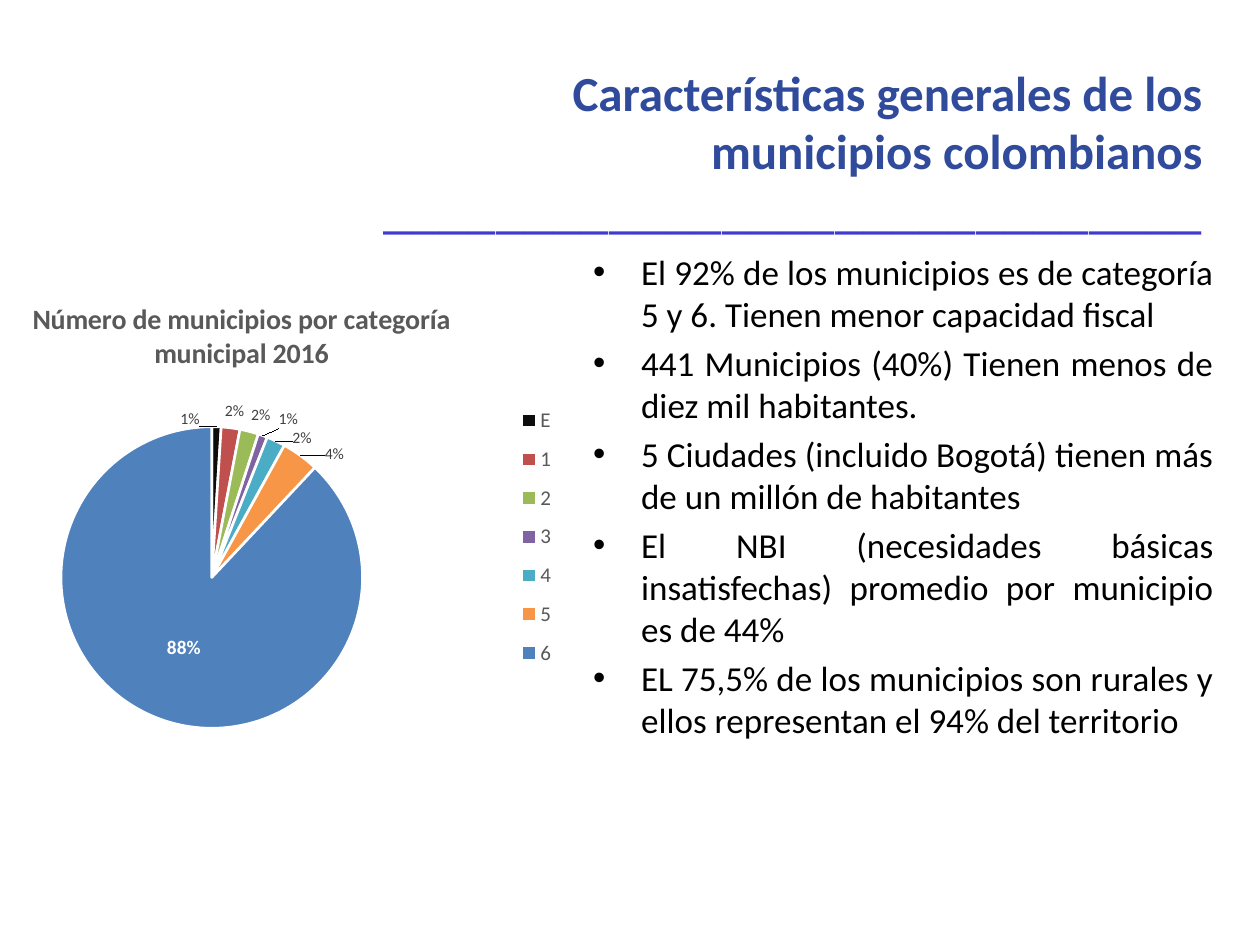
import pptx
import pptx.chart.data
import pptx.dml.color
import pptx.enum.chart
import pptx.enum.text
import pptx.oxml
import pptx.oxml.ns
import pptx.util

FONT = "Calibri"
CELL = pptx.util.Inches(0.1)  # the slide is a grid of 100 columns by 75 rows
ALIGN = pptx.enum.text.PP_ALIGN
ANCHOR = pptx.enum.text.MSO_ANCHOR
LABEL_POSITION = pptx.enum.chart.XL_LABEL_POSITION

BULLETS = [
    "El 92% de los municipios es de categoría 5 y 6. Tienen menor capacidad fiscal",
    "441 Municipios (40%) Tienen menos de diez mil habitantes.",
    "5 Ciudades (incluido Bogotá) tienen más de un millón de habitantes",
    "El NBI (necesidades básicas insatisfechas) promedio por municipio es de 44%",
    "EL 75,5% de los municipios son rurales y ellos representan el 94% del territorio",
]
# category, percentage, colour, label shift as shares of the chart
SLICES = [
    ("E", 1, "0D0D0D", (-0.04, 0.02)),
    ("1", 2, "C0504D", (-0.01, 0)),
    ("2", 2, "9BBB59", None),
    ("3", 1, "8064A2", (0.02, 0)),
    ("4", 2, "4BACC6", (0.02, 0.03)),
    ("5", 4, "F79646", (0.03, 0.03)),
    ("6", 88, "4F81BD", None),
]


def colour(code):
    return pptx.dml.color.RGBColor.from_string(code)


def grid(*cells):
    return [round(cell * CELL) for cell in cells]


def style(font, size, code, bold=False):
    font.name = FONT
    font.size = pptx.util.Pt(size)
    font.bold = bold
    font.color.rgb = colour(code)


def add_box(page, place, anchor):
    frame = page.shapes.add_textbox(*grid(*place)).text_frame
    frame.word_wrap = True
    frame.vertical_anchor = anchor
    return frame


def add_span(para, text, align, size, code, bold=False):
    para.alignment = align
    span = para.add_run()
    span.text = text
    style(span.font, size, code, bold)


def add_bullets(page, place, texts):
    frame = add_box(page, place, ANCHOR.TOP)
    for index, text in enumerate(texts):
        para = frame.add_paragraph() if index else frame.paragraphs[0]
        properties = para._p.get_or_add_pPr()
        indent = pptx.util.Inches(0.38)
        properties.set("marL", str(indent))
        properties.set("indent", str(-indent))
        for tag, key, value in (("a:buFont", "typeface", "Arial"), ("a:buChar", "char", "•")):
            bullet = pptx.oxml.ns.qn(tag)
            properties.append(properties.makeelement(bullet, {key: value}))
        if index:
            para.space_before = pptx.util.Pt(4)
        add_span(para, text, ALIGN.JUSTIFY, 20, "000000")


def set_layout(element, index, mode="edge", inner=False, **shares):
    """Place a chart part at shares of the chart's size, or shift it with mode factor."""
    for old in element.findall(pptx.oxml.ns.qn("c:layout")):
        element.remove(old)
    target = '<c:layoutTarget val="inner"/>' if inner else ""
    modes = "".join(f'<c:{key}Mode val="{mode}"/>' for key in "xy")
    values = "".join(f'<c:{key} val="{value}"/>' for key, value in shares.items())
    element.insert(index, pptx.oxml.parse_xml(
        f'<c:layout {pptx.oxml.ns.nsdecls("c")}><c:manualLayout>'
        f"{target}{modes}{values}</c:manualLayout></c:layout>"))


def add_pie(page, place, title):
    data = pptx.chart.data.CategoryChartData()
    data.categories = [name for name, *_ in SLICES]
    data.add_series("Municipios", [value for _, value, *_ in SLICES])
    chart = page.shapes.add_chart(
        pptx.enum.chart.XL_CHART_TYPE.PIE, *grid(*place), data).chart
    style(chart.font, 10, "000000")

    add_span(chart.chart_title.text_frame.paragraphs[0], title, ALIGN.CENTER, 16, "595959", True)
    chart.chart_title.include_in_layout = False
    set_layout(chart.chart_title._element, 1, x=0.15, y=0)

    chart.has_legend = True
    chart.legend.position = pptx.enum.chart.XL_LEGEND_POSITION.RIGHT
    chart.legend.include_in_layout = False
    style(chart.legend.font, 12, "595959")
    set_layout(chart.legend._element, 1, x=0.88, y=0.22, w=0.06, h=0.63)

    plot = chart.plots[0]
    plot.vary_by_categories = True
    set_layout(chart._chartSpace.chart.plotArea, 0, inner=True, x=0.2, y=0.25, w=0.45, h=0.75)
    style_slices(plot.series[0])


def style_slices(series):
    labels = series.data_labels
    labels.show_value = False
    labels.show_percentage = True
    labels.number_format = "0%"
    labels.number_format_is_linked = False
    labels.position = LABEL_POSITION.OUTSIDE_END
    style(labels.font, 9, "404040")
    for index, (_, value, code, shift) in enumerate(SLICES):
        point = series.points[index]
        point.format.fill.solid()
        point.format.fill.fore_color.rgb = colour(code)
        point.format.line.color.rgb = colour("FFFFFF")
        point.format.line.width = pptx.util.Pt(1.5)
        if value > 50:
            style(point.data_label.font, 11, "FFFFFF", True)
            point.data_label.position = LABEL_POSITION.CENTER
        else:
            style(point.data_label.font, 9, "404040")
            point.data_label.position = LABEL_POSITION.OUTSIDE_END
        label = labels._element.findall(pptx.oxml.ns.qn("c:dLbl"))[index]
        for tag, shown in (("c:showVal", "0"), ("c:showPercent", "1")):
            label.find(pptx.oxml.ns.qn(tag)).set("val", shown)
        if shift:
            set_layout(label, 1, mode="factor", x=shift[0], y=shift[1])


def main():
    deck = pptx.Presentation()
    deck.slide_width, deck.slide_height = grid(100, 75)
    page = deck.slides.add_slide(deck.slide_layouts[6])

    rule = add_box(page, (5.1, 14.7, 91.3, 8.7), ANCHOR.MIDDLE)
    rule.margin_bottom = pptx.util.Inches(0.6)
    add_span(rule.paragraphs[0], "_" * 29, ALIGN.RIGHT, 32.4, "413AD2")
    add_bullets(page, (46.1, 19.4, 51.2, 60.6), BULLETS)
    heading = add_box(page, (35.8, 4.4, 60.6, 10.4), ANCHOR.MIDDLE)
    add_span(heading.paragraphs[0], "Características generales de los municipios colombianos",
             ALIGN.RIGHT, 28, "304A9C", True)
    add_pie(page, (-5.8, 23.4, 53.2, 35.9), "Número de municipios por categoría municipal 2016")
    deck.save("out.pptx")


if __name__ == "__main__":
    main()
